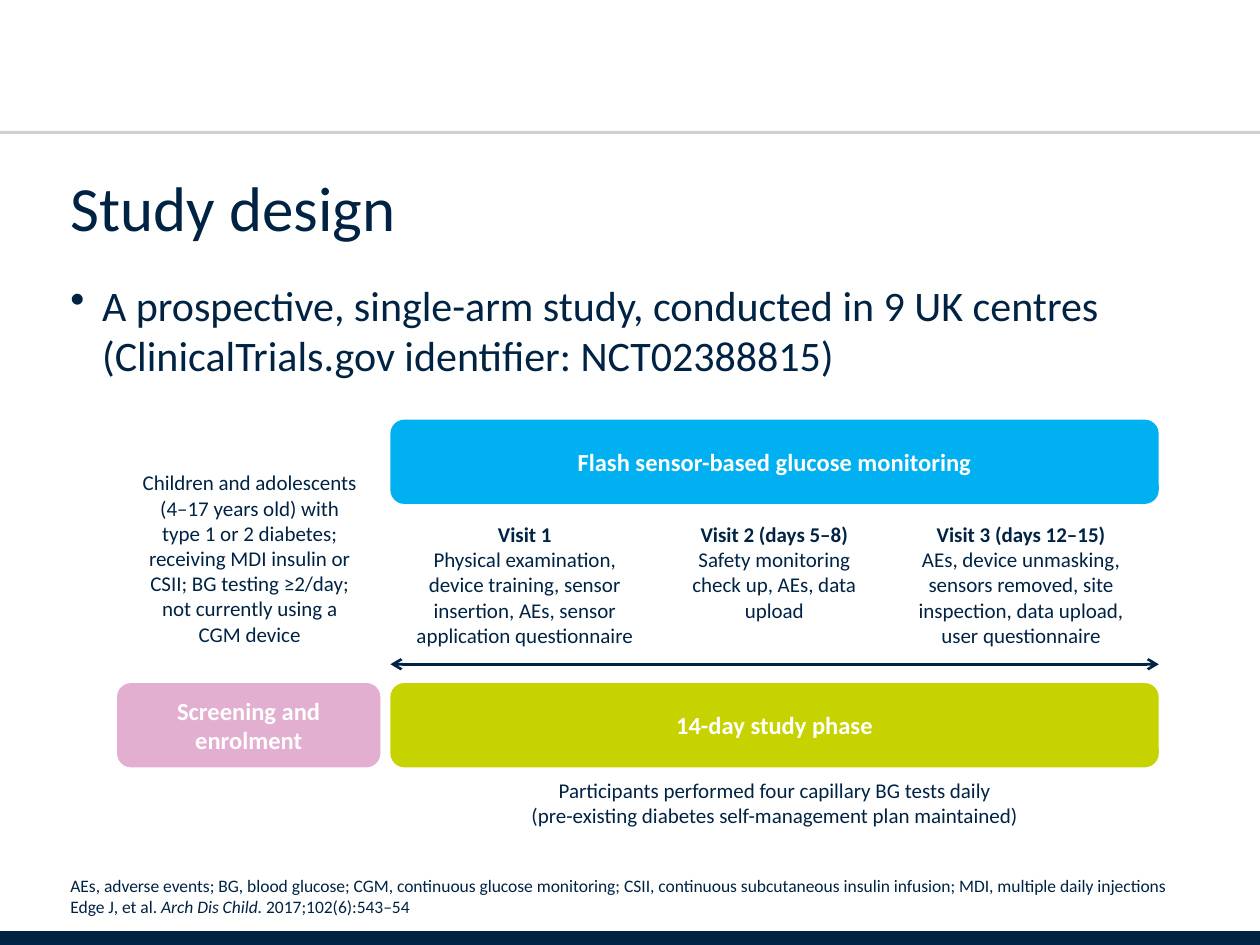
from dataclasses import dataclass
from lxml import etree
from pptx import Presentation
from pptx.dml.color import RGBColor
from pptx.enum.shapes import MSO_CONNECTOR, MSO_SHAPE
from pptx.enum.text import MSO_ANCHOR, PP_ALIGN
from pptx.oxml.ns import qn
from pptx.util import Cm, Pt

LINE = MSO_CONNECTOR.STRAIGHT
ROUND = MSO_SHAPE.ROUNDED_RECTANGLE
TOP, MID, LOW = MSO_ANCHOR.TOP, MSO_ANCHOR.MIDDLE, MSO_ANCHOR.BOTTOM
LEFT, CENTER = PP_ALIGN.LEFT, PP_ALIGN.CENTER


@dataclass(frozen=True)
class Theme:
    """Hold the colours and type sizes."""
    font: str = "Calibri"
    navy: str = "002344"
    grey: str = "9DA1A6"
    white: str = "FFFFFF"
    blue: str = "00B0F0"
    lime: str = "C7D301"
    pink: str = "E3AFD1"
    title: int = 36
    body: int = 24
    label: int = 14
    note: int = 12
    foot: int = 10


THEME = Theme()


def style(para, size, color=THEME.navy, bold=None):
    """Set the font of a whole paragraph."""
    font = para.font
    font.name, font.size, font.bold = THEME.font, Pt(size), bold
    font.color.rgb = RGBColor.from_string(color)


def write(para, text, bold=None, italic=None):
    """Add runs to a paragraph, with a line break at each newline."""
    for i, part in enumerate(text.split("\n")):
        if i:
            para.add_line_break()
        if part:
            run = para.add_run()
            run.text = part
            run.font.bold, run.font.italic = bold, italic


def add_text(slide, box, text, size, align=CENTER, anchor=TOP):
    """Add a wrapped text box and return its first paragraph."""
    frame = slide.shapes.add_textbox(*map(Cm, box)).text_frame
    frame.word_wrap, frame.vertical_anchor = True, anchor
    para = frame.paragraphs[0]
    para.alignment = align
    write(para, text)
    style(para, size)
    return para


def add_point(slide, box, text):
    """Add a bulleted statement."""
    para = add_text(slide, box, "", THEME.body, LEFT)
    write(para, text)
    props = para._p.get_or_add_pPr()
    props.set("marL", str(Cm(0.64)))
    props.set("indent", str(-Cm(0.64)))
    mark = etree.Element(qn("a:buChar"), char="•")
    props.insert(0, mark)
    para.space_after = Pt(6)


def add_visit(slide, box, head, *parts):
    """Add a visit with a bold heading above its tasks."""
    frame = slide.shapes.add_textbox(*map(Cm, box)).text_frame
    frame.word_wrap = True
    for i, part in enumerate(parts):
        para = frame.add_paragraph() if i else frame.paragraphs[0]
        para.alignment = CENTER
        if not i:
            write(para, head + "\n", bold=True)
        write(para, part)
        style(para, THEME.note)


def add_bar(slide, box, text, color):
    """Add a rounded bar with a bold white label."""
    bar = slide.shapes.add_shape(ROUND, *map(Cm, box))
    bar.shadow.inherit = False
    bar.fill.solid()
    bar.fill.fore_color.rgb = RGBColor.from_string(color)
    bar.line.fill.background()
    frame = bar.text_frame
    frame.word_wrap, frame.vertical_anchor = True, MID
    para = frame.paragraphs[0]
    para.text, para.alignment = text, CENTER
    style(para, THEME.label, THEME.white, True)


def add_line(slide, x, y, width, color, weight, alpha=None, heads=False):
    """Add a level line, see-through or double-headed if asked."""
    line = slide.shapes.add_connector(LINE, Cm(x), Cm(y), Cm(x + width), Cm(y))
    line.line.width = Pt(weight)
    line.line.color.rgb = RGBColor.from_string(color)
    props = line._element.spPr
    etree.SubElement(props, qn("a:effectLst"))
    if alpha:
        tint = props.find(".//" + qn("a:srgbClr"))
        etree.SubElement(tint, qn("a:alpha"), val=str(alpha * 1000))
    if heads:
        for end in ("a:headEnd", "a:tailEnd"):
            etree.SubElement(props.find(qn("a:ln")), qn(end), type="arrow")


def main():
    """Build the study design slide."""
    deck = Presentation()
    deck.slide_width, deck.slide_height = Cm(25.4), Cm(19.05)
    slide = deck.slides.add_slide(deck.slide_layouts[6])
    edge, span = 1.17, 23.19
    left, width, tall = 7.87, 15.49, 1.7
    phase, visit = 13.77, 10.39

    add_line(slide, 0, 18.95, 25.4, THEME.navy, 10)
    add_line(slide, 0, 2.67, 25.4, THEME.grey, 1.75, alpha=50)
    title = add_text(slide, (edge, 3.18, span, 1.88), "Study design",
                     THEME.title, LEFT, LOW)
    title.line_spacing = 0.9
    add_point(slide, (edge, 5.51, span, 2.6),
              "A prospective, single-arm study, conducted in 9 UK centres "
              "(ClinicalTrials.gov identifier: NCT02388815)")
    foot = add_text(
        slide, (edge, 17.86, span, 0.76),
        "AEs, adverse events; BG, blood glucose; CGM, continuous glucose "
        "monitoring; CSII, continuous subcutaneous insulin infusion; MDI, "
        "multiple daily injections\nEdge J, et al. ", THEME.foot, LEFT, LOW)
    write(foot, "Arch Dis Child. ", italic=True)
    write(foot, "2017;102(6):543–54")

    add_bar(slide, (left, 8.46, width, tall),
            "Flash sensor-based glucose monitoring", THEME.blue)
    add_text(slide, (8.05, 15.54, 15.14, 1.27),
             "Participants performed four capillary BG tests daily\n"
             "(pre-existing diabetes self-management plan maintained)",
             THEME.note)
    add_text(slide, (2.62, 9.35, 4.83, 3.84),
             "Children and adolescents (4–17 years old) with type 1 or 2 "
             "diabetes; receiving MDI insulin or CSII; BG testing ≥2/day; "
             "not currently using a CGM device", THEME.note)
    add_line(slide, left, 13.39, width, THEME.navy, 1.5, heads=True)
    add_visit(slide, (8.08, visit, 5, 2.82), "Visit 1",
              "Physical examination, device training, sensor",
              "insertion, AEs, sensor application questionnaire")
    add_visit(slide, (13.36, visit, 4.5, 2.31), "Visit 2 (days 5–8)",
              "Safety monitoring check up, AEs, data upload")
    add_visit(slide, (18.11, visit, 4.95, 2.82), "Visit 3 (days 12–15)",
              "AEs, device unmasking, sensors removed, site inspection, "
              "data upload, user questionnaire")
    add_bar(slide, (left, phase, width, tall), "14-day study phase", THEME.lime)
    add_bar(slide, (2.36, phase, 5.31, tall), "Screening and enrolment",
            THEME.pink)
    deck.save("out.pptx")


if __name__ == "__main__":
    main()
